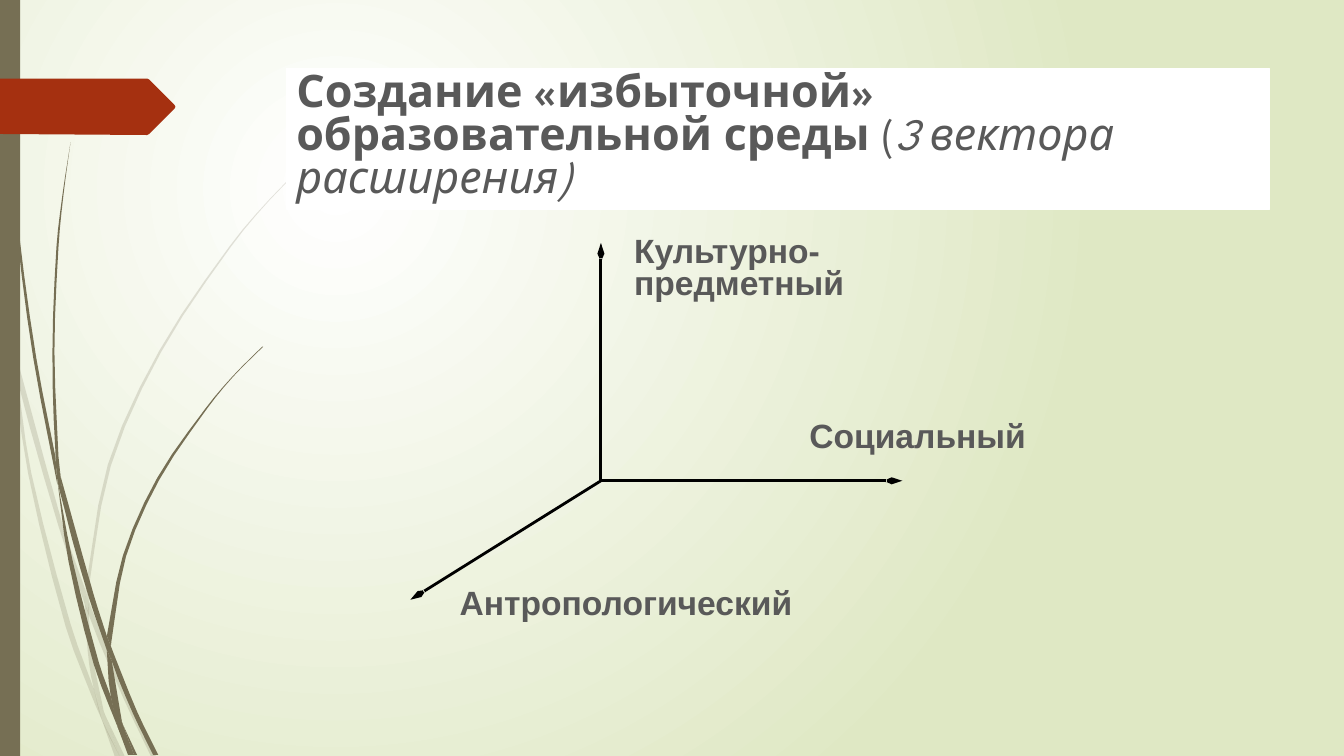
from lxml import etree
from math import dist
from pptx import Presentation
from pptx.dml.color import RGBColor
from pptx.enum.shapes import MSO_CONNECTOR, MSO_SHAPE
from pptx.enum.text import MSO_ANCHOR, MSO_AUTO_SIZE, PP_ALIGN
from pptx.oxml.ns import qn
from pptx.util import Pt

PX = 9144  # 100 px to the inch
SLIDE_WIDTH, SLIDE_HEIGHT = 1333, 750
CURVE_STEPS = 3

RECTANGLE = MSO_SHAPE.RECTANGLE
STRAIGHT = MSO_CONNECTOR.STRAIGHT
LEFT = PP_ALIGN.LEFT
TOP = MSO_ANCHOR.TOP
GROW, FIXED = MSO_AUTO_SIZE.SHAPE_TO_FIT_TEXT, MSO_AUTO_SIZE.NONE

WHITE = RGBColor(0xFF, 0xFF, 0xFF)
PALE_GREEN = RGBColor(0xDF, 0xE8, 0xC4)
OLIVE = RGBColor(0x76, 0x6F, 0x54)
RUST = RGBColor(0xA5, 0x30, 0x10)
GREY = RGBColor(0x59, 0x59, 0x59)
BLACK = RGBColor(0, 0, 0)

# Content: title runs are (text, bold, italic)
TITLE_BOX = (284, 68, 975, 140)
TITLE_RUNS = [
    ("Создание «избыточной» образовательной среды ", True, False),
    ("(", False, False),
    ("3 вектора расширения)", False, True),
]
AXIS_ORIGIN = (596, 477)
AXIS_ENDS = [(596, 241), (895, 477), (407, 595)]
AXIS_LABELS = [
    ((446, 580, 417, 42), ["Антропологический"]),
    ((619, 231, 425, 75), ["Культурно-", "предметный"]),
    ((793, 414, 294, 42), ["Социальный"]),
]

# Grass pieces: each has one edge and the opposite edge back
PALE_GRASS = [
    ([(11, 350), (9, 322), (0, 282)], [(0, 299), (10, 344)]),
    ([(14, 345), (17, 376), (58, 522), (84, 599)], [(85, 586), (62, 520), (14, 345)]),
    ([(88, 596), (88, 610), (123, 694), (150, 751)], [(155, 751), (127, 692), (92, 607)]),
    ([(119, 751), (124, 751)], [(105, 711)]),
    ([(11, 350), (28, 470), (65, 621), (92, 693), (101, 714)],
     [(93, 683), (70, 619), (31, 469), (17, 376), (11, 350)]),
    ([(84, 599), (87, 646), (93, 683), (105, 711)], [(103, 706), (91, 646), (88, 608)]),
    ([(312, 153), (268, 197), (228, 244), (158, 348), (107, 461), (85, 584)],
     [(88, 596), (88, 584), (110, 462), (160, 349), (229, 245), (268, 198), (312, 154)]),
    ([(101, 714), (114, 751)], [(119, 751)]),
    ([(88, 610), (88, 596)], [(85, 586), (84, 599)]),
    ([(93, 683), (101, 714), (119, 751)], [(105, 711), (96, 692)]),
]
DARK_GRASS = [
    ([(3, 0), (7, 110), (17, 233), (33, 355), (57, 481)],
     [(55, 453), (36, 355), (19, 232), (8, 109), (4, 0)]),
    ([(60, 472), (64, 505), (88, 592), (106, 645)], [(106, 631), (93, 590), (60, 472)]),
    ([(110, 641), (111, 656), (132, 708), (152, 749)], [(157, 749), (136, 706), (113, 649)]),
    ([(57, 477), (68, 557), (93, 659), (117, 722)],
     [(110, 691), (98, 657), (72, 556), (57, 477)]),
    ([(70, 141), (62, 193), (56, 245), (52, 349), (55, 449), (60, 472)],
     [(58, 453), (54, 349), (58, 245), (63, 193), (70, 141)]),
    ([(133, 749), (136, 749)], [(122, 719)]),
    ([(55, 449), (57, 477), (64, 505)], [(60, 472), (55, 449)]),
    ([(260, 344), (231, 373), (204, 405), (156, 474), (122, 551), (106, 631)],
     [(110, 641), (111, 633), (125, 552), (158, 476), (205, 406), (231, 374), (261, 344)]),
    ([(117, 722), (127, 749)], [(131, 749)]),
    ([(106, 645), (110, 691), (122, 719)], [(121, 716), (111, 656)]),
    ([(106, 645), (111, 656)], [(110, 641), (106, 631)]),
    ([(110, 691), (117, 722), (130, 749)], [(133, 749), (122, 719)]),
]
SIDE_BAR = (0, 0, 20, 750)
POINTER = [(0, 78), (146, 78), (148, 79), (173, 104), (174, 106), (173, 108),
           (148, 133), (146, 134), (0, 133)]


def emu(values):
    return [round(value * PX) for value in values]


def smooth(points):
    """Return points along a smooth curve through the given ones."""
    last = len(points) - 1
    if last < 2:
        return points
    slopes = []
    for i in range(last + 1):
        before, here, after = points[max(i - 1, 0)], points[i], points[min(i + 1, last)]
        length = dist(before, here) + dist(here, after)
        slopes.append([(b - a) / length for a, b in zip(before, after)])
    curve = [points[0]]
    for i in range(last):
        start, end = points[i], points[i + 1]
        length = dist(start, end)
        for step in range(1, CURVE_STEPS + 1):
            t = step / CURVE_STEPS
            ease = t * t * (3 - 2 * t)
            leave = length * t * (1 - t) ** 2
            arrive = length * t * t * (t - 1)
            curve.append([
                start[k] + (end[k] - start[k]) * ease
                + slopes[i][k] * leave + slopes[i + 1][k] * arrive
                for k in (0, 1)])
    return curve


def paint(shape, color, opacity=100):
    shape.shadow.inherit = False
    shape.fill.solid()
    shape.fill.fore_color.rgb = color
    shape.line.fill.background()
    if opacity < 100:
        tint = shape.fill._xPr.find(qn("a:solidFill"))[0]
        etree.SubElement(tint, qn("a:alpha"), val=str(opacity * 1000))


def add_outline(shapes, points, color, opacity=100):
    corners = [emu(point) for point in points]
    builder = shapes.build_freeform(*corners[0])
    builder.add_line_segments(corners[1:], close=True)
    paint(builder.convert_to_shape(), color, opacity)


def add_run(paragraph, text, size, font, bold, italic=False):
    run = paragraph.add_run()
    run.text = text
    run.font.size = Pt(size)
    run.font.name = font
    run.font.bold = bold
    run.font.italic = italic
    run.font.color.rgb = GREY


def set_frame(frame, auto_size):
    frame.word_wrap = True
    frame.auto_size = auto_size
    frame.vertical_anchor = TOP


def set_paragraph(paragraph):
    paragraph.alignment = LEFT
    paragraph.line_spacing = 0.8


def main():
    presentation = Presentation()
    presentation.slide_width, presentation.slide_height = emu((SLIDE_WIDTH, SLIDE_HEIGHT))
    slide = presentation.slides.add_slide(presentation.slide_layouts[6])

    # Background: round gradient centred in the upper left quarter
    background = slide.background.fill
    background.gradient()
    for stop, color in zip(background.gradient_stops, (WHITE, PALE_GREEN)):
        stop.color.rgb = color
    linear = slide._element.find(".//" + qn("a:lin"))
    gradient = linear.getparent()
    gradient.remove(linear)
    circle = etree.SubElement(gradient, qn("a:path"), {"path": "circle"})
    etree.SubElement(circle, qn("a:fillToRect"), l="50000", t="50000", r="100000", b="100000")

    # Grass, side bar and pointer
    for pieces, opacity in ((PALE_GRASS, 20), (DARK_GRASS, 100)):
        group = slide.shapes.add_group_shape()
        for edge, opposite in pieces:
            add_outline(group.shapes, smooth(edge) + smooth(opposite), OLIVE, opacity)
    paint(slide.shapes.add_shape(RECTANGLE, *emu(SIDE_BAR)), OLIVE)
    add_outline(slide.shapes, POINTER, RUST)

    # Title
    title = slide.shapes.add_shape(RECTANGLE, *emu(TITLE_BOX))
    paint(title, WHITE)
    title.line.color.rgb = WHITE
    title.line.width = Pt(0.75)
    set_frame(title.text_frame, FIXED)
    heading = title.text_frame.paragraphs[0]
    set_paragraph(heading)
    for text, bold, italic in TITLE_RUNS:
        add_run(heading, text, 32, "League Spartan", bold, italic)

    # Axes
    axes = slide.shapes.add_group_shape()
    for end in AXIS_ENDS:
        axis = axes.shapes.add_connector(STRAIGHT, *emu(AXIS_ORIGIN + end))
        axis.line.color.rgb = BLACK
        axis.line.width = Pt(2)
        etree.SubElement(axis.line._ln, qn("a:tailEnd"), type="arrow", w="sm", len="lg")
        etree.SubElement(axis._element.spPr, qn("a:effectLst"))

    # Axis labels
    for box, lines in AXIS_LABELS:
        frame = slide.shapes.add_textbox(*emu(box)).text_frame
        set_frame(frame, GROW)
        for i, line in enumerate(lines):
            paragraph = frame.add_paragraph() if i else frame.paragraphs[0]
            set_paragraph(paragraph)
            add_run(paragraph, line, 24, "Arial", True)

    presentation.save("out.pptx")


if __name__ == "__main__":
    main()
